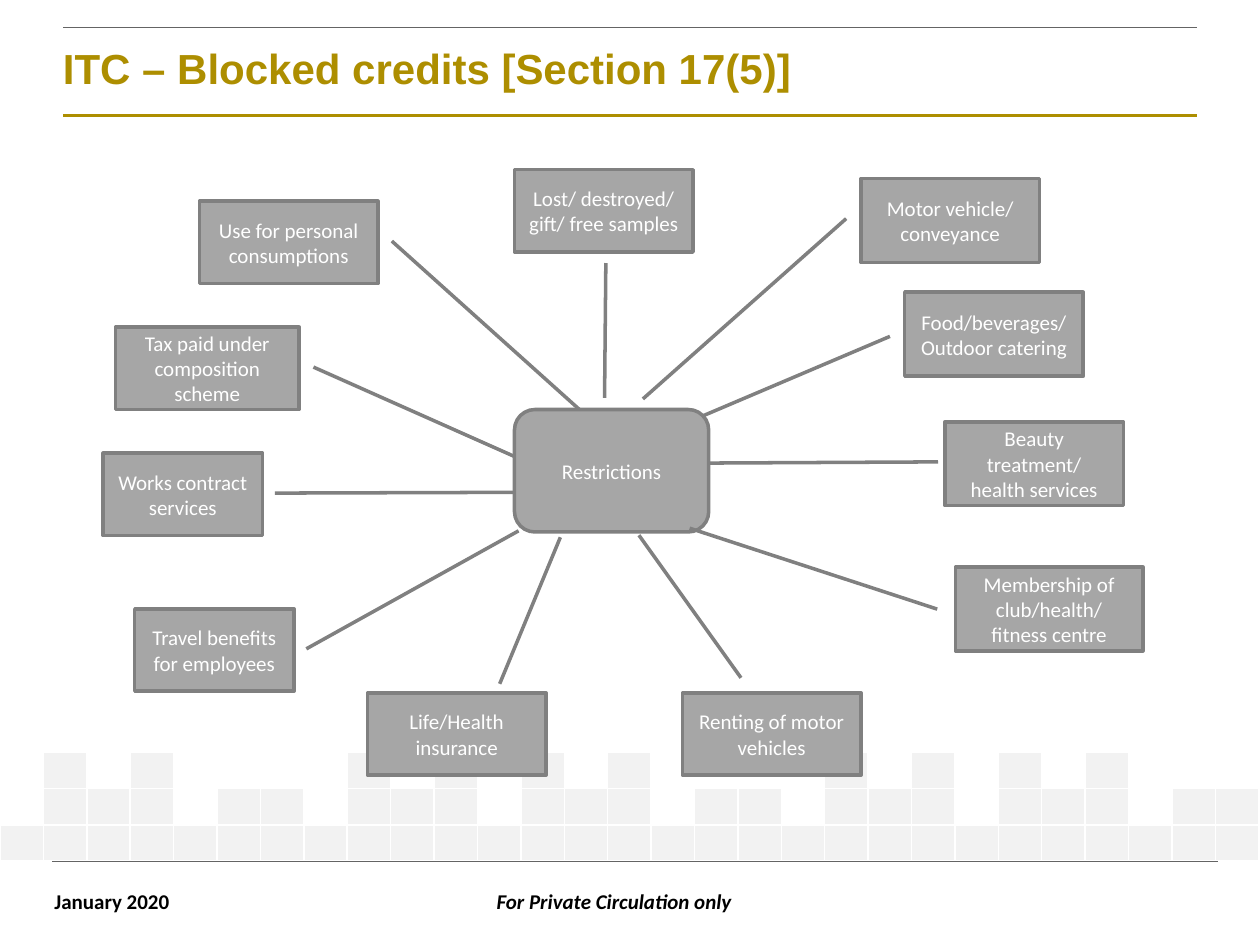
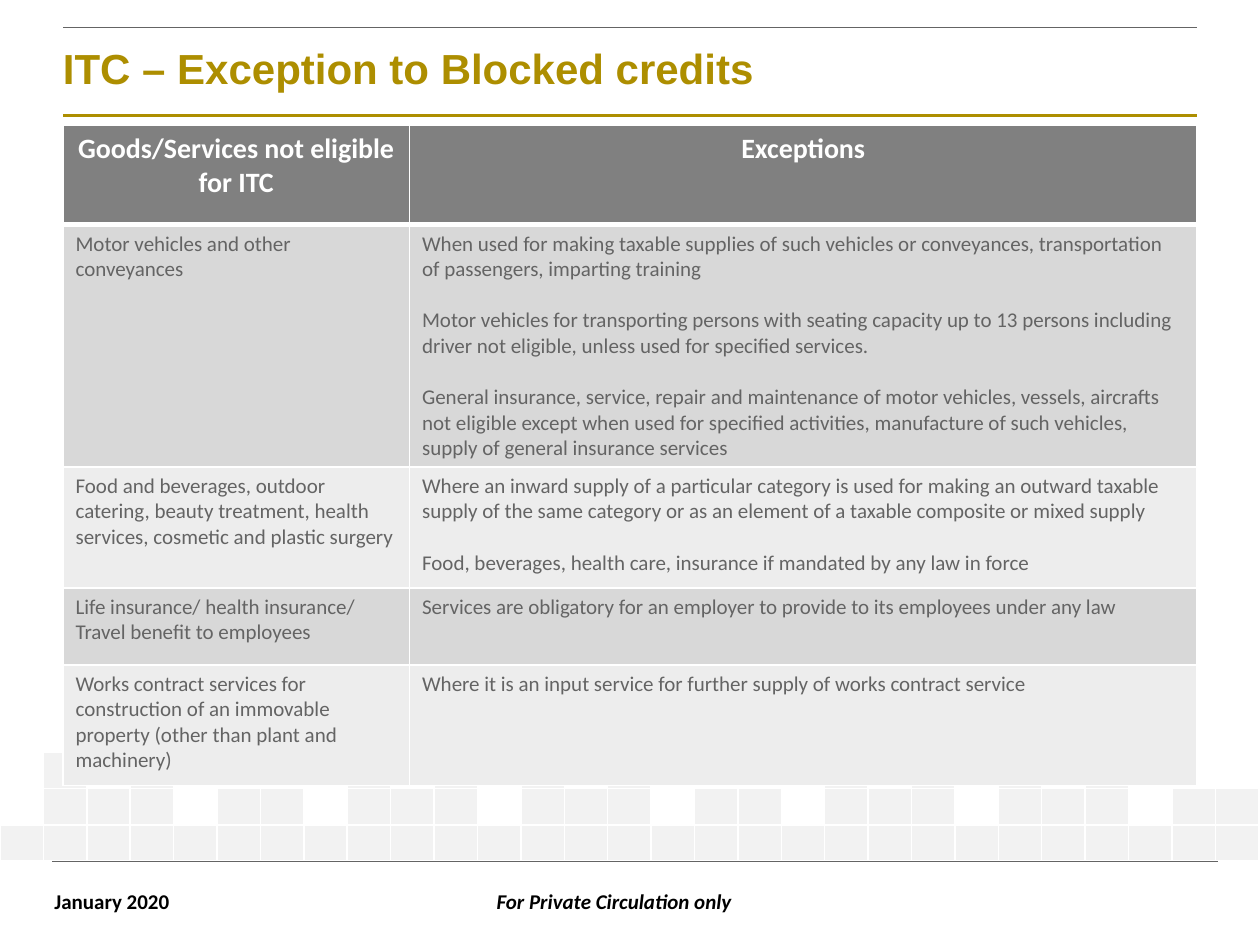
from typing import NamedTuple

from lxml.etree import SubElement
from pptx import Presentation
from pptx.dml.color import RGBColor
from pptx.enum.shapes import MSO_CONNECTOR as Link, MSO_SHAPE as Form
from pptx.enum.text import MSO_ANCHOR as Anchor, PP_ALIGN as Align
from pptx.oxml.ns import qn
from pptx.slide import Slide
from pptx.util import Pt

WIDE, HIGH = 720, 540
GOLD, SLATE, GREY, SILVER = "AD8E00", "646464", "808080", "A6A6A6"
WHITE, BLACK, PALE = "FFFFFF", "000000", "F2F2F2"
ODD, EVEN = "D8D8D8", "EDEDED"
BAND = (
    ".#.#....#.#.#.#....#.#.#.#...",
    ".###.##.###.###.##.###.###.##",
    "#" * 29,
)


class Style(NamedTuple):
    size: float
    color: str
    font: str = "Calibri"
    bold: bool = False
    slant: bool = False


class Rule(NamedTuple):
    left: float
    right: float
    y: float
    color: str
    width: float


class Label(NamedTuple):
    """A callout; start and end give its line as shares (y, x) of the box."""
    text: str
    left: float
    top: float
    width: float
    height: float
    start: tuple[float, float]
    end: tuple[float, float]


class Row(NamedTuple):
    height: float
    item: str
    rules: list[str]


TITLE = Style(24, GOLD, "Arial", bold=True)
DATE = Style(12, BLACK, bold=True)
NOTE = Style(12, BLACK, bold=True, slant=True)
TAG = Style(12, WHITE)
HEAD = Style(16, WHITE, bold=True)
BODY = Style(12, SLATE)

RULES = (
    Rule(36, 684, 66, GOLD, 1.5),
    Rule(36, 684, 15.8, SLATE, 0.5),
    Rule(30, 696, 492, SLATE, 0.25),
)

BEHIND = (
    Label("Use for personal consumptions", 114, 115, 102, 47,
          (0.485, 1.078), (2.675, 2.202)),
    Label("Tax paid under composition scheme", 66, 187, 105, 47,
          (0.485, 1.078), (1.825, 2.426)),
    Label("Works contract services", 59, 259, 91, 47,
          (0.485, 1.078), (0.475, 2.783)),
    Label("Beauty treatment/ health services", 540, 241, 102, 48,
          (0.478, -0.039), (0.496, -1.654)),
    Label("Food/beverages/ Outdoor catering", 517, 167, 102, 48,
          (0.526, -0.083), (1.73, -1.416)),
)
FRONT = (
    Label("Motor vehicle/ conveyance", 492, 102, 102, 48,
          (0.478, -0.083), (2.625, -1.222)),
    Label("Membership of club/health/ fitness centre", 546, 324, 107, 48,
          (0.502, -0.098), (-0.462, -1.42)),
    Label("Travel benefits for employees", 77, 348, 91, 47,
          (0.485, 1.078), (-0.95, 2.411)),
    Label("Life/Health insurance", 210, 396, 102, 47,
          (-0.111, 0.741), (-1.893, 1.081)),
    Label("Renting of motor vehicles", 390, 396, 102, 47,
          (-0.184, 0.328), (-1.918, -0.244)),
    Label("Lost/ destroyed/ gift/ free samples", 294, 97, 102, 47,
          (1.135, 0.512), (2.775, 0.505)),
)

ROWS = (
    Row(138.5, "Motor vehicles and other conveyances", [
        "When used for making taxable supplies of such vehicles or "
        "conveyances, transportation of passengers, imparting training",
        "Motor vehicles for transporting persons with seating capacity up to "
        "13 persons including driver not eligible, unless used for specified "
        "services.",
        "General insurance, service, repair and maintenance of motor "
        "vehicles, vessels, aircrafts not eligible except when used for "
        "specified activities, manufacture of such vehicles, supply of "
        "general insurance services"]),
    Row(69, "Food and beverages, outdoor catering, beauty treatment, health "
        "services, cosmetic and plastic surgery", [
            "Where an inward supply of a particular category is used for "
            "making an outward taxable supply of the same category or as an "
            "element of a taxable composite or mixed supply",
            "Food, beverages, health care, insurance if mandated by any law "
            "in force"]),
    Row(44, "Life insurance/ health insurance/ Travel benefit to employees", [
        "Services are obligatory for an employer to provide to its employees "
        "under any law"]),
    Row(69, "Works contract services for construction of an immovable "
        "property (other than plant and machinery)", [
            "Where it is an input service for further supply of works "
            "contract service"]),
)


def tint(code: str) -> RGBColor:
    return RGBColor.from_string(code)


def place(*sides: float) -> list[Pt]:
    return [Pt(side) for side in sides]


def write(frame, lines: list[str], style: Style, align=Align.LEFT,
          gap: float = 0) -> None:
    """Fill a text frame, with a gap above each paragraph but the first."""
    for rank, line in enumerate(lines):
        para = frame.add_paragraph() if rank else frame.paragraphs[0]
        para.text = line
        para.alignment = align
        if rank and gap:
            para.space_before = Pt(gap)
        for run in para.runs:
            font = run.font
            font.name, font.size = style.font, Pt(style.size)
            font.bold, font.italic = style.bold, style.slant
            font.color.rgb = tint(style.color)


def add_text(slide: Slide, text: str, sides: tuple, style: Style,
             align=Align.LEFT, wrap: bool = True):
    frame = slide.shapes.add_textbox(*place(*sides)).text_frame
    frame.word_wrap = wrap
    write(frame, [text], style, align)
    return frame


def add_rule(slide: Slide, rule: Rule) -> None:
    line = slide.shapes.add_connector(
        Link.STRAIGHT, *place(rule.left, rule.y, rule.right, rule.y))
    line.line.color.rgb = tint(rule.color)
    line.line.width = Pt(rule.width)
    SubElement(line._element.spPr, qn("a:effectLst"))


def add_grid(slide: Slide, left: float, top: float, cols: list[float],
             rows: list[float]):
    frame = slide.shapes.add_table(
        len(rows), len(cols), *place(left, top, sum(cols), sum(rows)))
    grid = frame.table
    grid.first_row = grid.horz_banding = False
    for col, width in zip(grid.columns, cols):
        col.width = Pt(width)
    for row, height in zip(grid.rows, rows):
        row.height = Pt(height)
    return grid


def paint(cell, fill: str | None, top: float = 1, base: float = 1) -> None:
    """Give a cell white edges and a fill, or none."""
    props = cell._tc.get_or_add_tcPr()
    for side, width in zip("LRTB", (1, 1, top, base)):
        edge = SubElement(props, qn(f"a:ln{side}"), w=str(Pt(width)))
        solid = SubElement(edge, qn("a:solidFill"))
        SubElement(solid, qn("a:srgbClr"), val=WHITE)
    if fill:
        cell.fill.solid()
        cell.fill.fore_color.rgb = tint(fill)
    else:
        cell.fill.background()


def add_band(slide: Slide) -> None:
    count = len(BAND[0])
    grid = add_grid(slide, 0, 430, [WIDE / count] * count,
                    [20.7] * len(BAND))
    for y, marks in enumerate(BAND):
        for x, mark in enumerate(marks):
            cell = grid.cell(y, x)
            paint(cell, PALE if mark == "#" else None)
            para = cell.text_frame.paragraphs[0]._p
            SubElement(para, qn("a:endParaRPr"), sz="800")


def add_page(deck, title: str) -> Slide:
    slide = deck.slides.add_slide(deck.slide_layouts[6])
    add_band(slide)
    for rule in RULES:
        add_rule(slide, rule)
    add_text(slide, "January 2020", (24, 504, 81, 22), DATE, wrap=False)
    add_text(slide, "For Private Circulation only", (174, 504, 354, 22),
             NOTE, Align.CENTER)
    frame = add_text(slide, title, (36, 16, 648, 47.5), TITLE)
    frame.vertical_anchor = Anchor.MIDDLE
    frame.margin_left = frame.margin_right = frame.margin_bottom = 0
    frame.margin_top = Pt(3)
    frame.paragraphs[0].line_spacing = 0.85
    return slide


def add_box(slide: Slide, form: Form, text: str, sides: tuple):
    box = slide.shapes.add_shape(form, *place(*sides))
    box.shadow.inherit = False
    box.fill.solid()
    box.fill.fore_color.rgb = tint(SILVER)
    box.line.color.rgb = tint(GREY)
    box.line.width = Pt(2)
    frame = box.text_frame
    frame.word_wrap = True
    frame.vertical_anchor = Anchor.MIDDLE
    write(frame, [text], TAG, Align.CENTER)
    return box


def add_label(slide: Slide, label: Label) -> None:
    box = add_box(slide, Form.LINE_CALLOUT_1, label.text, label[1:5])
    for rank, share in enumerate(label.start + label.end):
        box.adjustments[rank] = share


def draw_web(deck) -> None:
    slide = add_page(deck, "ITC – Blocked credits [Section 17(5)]")
    for label in BEHIND:
        add_label(slide, label)
    add_box(slide, Form.FLOWCHART_ALTERNATE_PROCESS, "Restrictions",
            (294, 234, 111, 70))
    for label in FRONT:
        add_label(slide, label)


def draw_table(deck) -> None:
    slide = add_page(deck, "ITC – Exception to Blocked credits")
    grid = add_grid(slide, 36, 71.5, [198, 450],
                    [57] + [row.height for row in ROWS])
    heads = ("Goods/Services not eligible for ITC", "Exceptions")
    for x, head in enumerate(heads):
        cell = grid.cell(0, x)
        paint(cell, GREY, base=3)
        write(cell.text_frame, [head], HEAD, Align.CENTER)
    for y, row in enumerate(ROWS, 1):
        for x, lines in enumerate(([row.item], row.rules)):
            cell = grid.cell(y, x)
            paint(cell, ODD if y % 2 else EVEN, top=3 if y == 1 else 1)
            write(cell.text_frame, lines, BODY, gap=14.65)


def main() -> None:
    deck = Presentation()
    deck.slide_width, deck.slide_height = place(WIDE, HIGH)
    draw_web(deck)
    draw_table(deck)
    deck.save("out.pptx")


if __name__ == "__main__":
    main()
